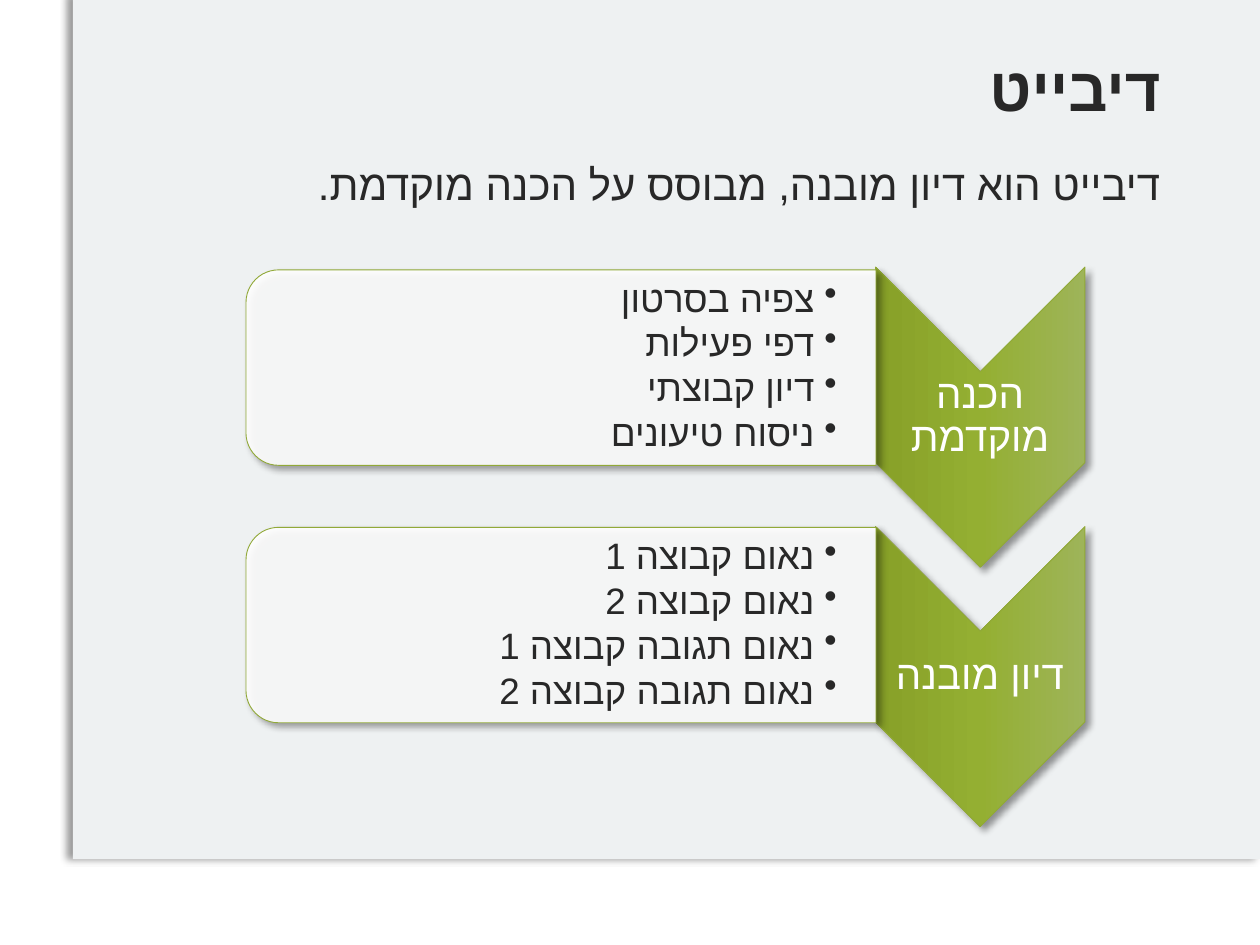
from copy import deepcopy

from lxml import etree
from pptx import Presentation
from pptx import util as u
from pptx.dml.color import RGBColor
from pptx.enum import shapes, text
from pptx.oxml.ns import qn

PANEL = RGBColor(0xEE, 0xF1, 0xF2)
INK = RGBColor(0x28, 0x28, 0x28)
WHITE = RGBColor(0xFF, 0xFF, 0xFF)
OLIVE = RGBColor(0x91, 0xA9, 0x38)
GREENS = [RGBColor(0x9E, 0xB4, 0x59), RGBColor(0x94, 0xAF, 0x32), RGBColor(0x87, 0xA0, 0x28)]


class Deck:
    """Drawing style and the slide being drawn; all lengths are in cm."""

    font = "Arial"

    def __init__(self, s):
        self.s = s

    def shape(self, kind, x, y, w, h, shadow_angle, rotation=0, line=None):
        sp = self.s.shapes.add_shape(kind, *map(u.Cm, (x, y, w, h)))
        sp.rotation = rotation
        if line is None:
            sp.line.fill.background()
        else:
            sp.line.color.rgb = line
            sp.line.width = u.Pt(0.5)
        sp.shadow.inherit = False
        effects = sp._element.spPr.find(qn("a:effectLst"))
        shadow = etree.SubElement(effects, qn("a:outerShdw"), blurRad=str(u.Pt(4)),
                                  dist=str(u.Pt(3)), dir=str(shadow_angle * 60000),
                                  rotWithShape="0")
        color = etree.SubElement(shadow, qn("a:srgbClr"), val="000000")
        etree.SubElement(color, qn("a:alpha"), val="40000")
        return sp

    def panel(self, x, y, w, h):
        sp = self.shape(shapes.MSO_SHAPE.RECTANGLE, x, y, w, h, 180)
        sp.fill.solid()
        sp.fill.fore_color.rgb = PANEL

    def chevron(self, cx, cy, length, breadth):
        sp = self.shape(shapes.MSO_SHAPE.CHEVRON, cx - length / 2, cy - breadth / 2,
                        length, breadth, 45, 90, OLIVE)
        sp.fill.gradient()
        sp.fill.gradient_angle = 270
        stops = sp._element.spPr.find(".//" + qn("a:gsLst"))
        stops.insert(1, deepcopy(stops[0]))
        for i, (stop, color) in enumerate(zip(sp.fill.gradient_stops, GREENS)):
            stop.position = i / 2
            stop.color.rgb = color

    def card(self, cx, cy, w, h):
        # Turned so that the two rounded corners face left
        sp = self.shape(shapes.MSO_SHAPE.ROUND_2_SAME_RECTANGLE, cx - h / 2, cy - w / 2,
                        h, w, 45, 270, OLIVE)
        sp.fill.solid()
        sp.fill.fore_color.rgb = WHITE
        color = sp._element.spPr.find(qn("a:solidFill"))[0]
        etree.SubElement(color, qn("a:alpha"), val="90000")

    def text(self, x, y, w, h, lines, size, color=INK, bold=False, centered=False,
             middle=True, bullets=False, insets=(0.25, 0.13, 0.25, 0.13)):
        tf = self.s.shapes.add_textbox(*map(u.Cm, (x, y, w, h))).text_frame
        tf.word_wrap = True
        tf.vertical_anchor = text.MSO_ANCHOR.MIDDLE if middle else text.MSO_ANCHOR.TOP
        tf.margin_left, tf.margin_top, tf.margin_right, tf.margin_bottom = map(u.Cm, insets)
        tf.text = "\n".join(lines)
        for p in tf.paragraphs:
            p.alignment = text.PP_ALIGN.CENTER if centered else text.PP_ALIGN.RIGHT
            p.line_spacing = 0.9
            pPr = p._p.get_or_add_pPr()
            pPr.set("rtl", "1")
            if bullets:
                p.space_after = u.Pt(3)
                pPr.set("marL", str(u.Cm(1.2)))
                pPr.set("indent", str(u.Cm(-0.46)))
                etree.SubElement(pPr, qn("a:buChar"), char="•")
            for r in p.runs:
                r.font.name = self.font
                r.font.size = u.Pt(size)
                r.font.bold = bold
                r.font.color.rgb = color
                etree.SubElement(r._r.get_or_add_rPr(), qn("a:cs"), typeface=self.font)


STAGES = [
    ("הכנה מוקדמת", ["צפיה בסרטון", "דפי פעילות", "דיון קבוצתי", "ניסוח טיעונים"]),
    ("דיון מובנה", ["נאום קבוצה 1", "נאום קבוצה 2",
                    "נאום תגובה קבוצה 1", "נאום תגובה קבוצה 2"]),
]


def main():
    prs = Presentation()
    prs.slide_width, prs.slide_height = u.Cm(25.4), u.Cm(19.05)
    deck = Deck(prs.slides.add_slide(prs.slide_layouts[6]))

    # Background panel and headings
    deck.panel(1.47, -0.08, 23.93, 17.4)
    deck.text(1.75, 0, 21.9, 3.68, ["דיבייט"], 35, bold=True)
    deck.text(1.75, 3.18, 21.9, 3.81, ["דיבייט הוא דיון מובנה, מבוסס על הכנה מוקדמת."],
              24, middle=False)

    # Stages: a chevron with its label, and a card with its steps
    for i, (label, steps) in enumerate(STAGES):
        chevron_y = 8.41 + 5.23 * i
        card_y = 7.41 + 5.19 * i
        deck.chevron(19.76, chevron_y, 6.05, 4.22)
        deck.text(17.65, chevron_y - 0.9, 4.22, 1.8, [label], 23, WHITE,
                  centered=True, insets=(0.05,) * 4)
        deck.card(11.31, card_y, 12.7, 3.94)
        deck.text(5.13, card_y - 1.78, 12.52, 3.56, steps, 21, bullets=True,
                  insets=(0.41, 0.03, 0.03, 0.03))

    prs.save("out.pptx")


if __name__ == "__main__":
    main()
